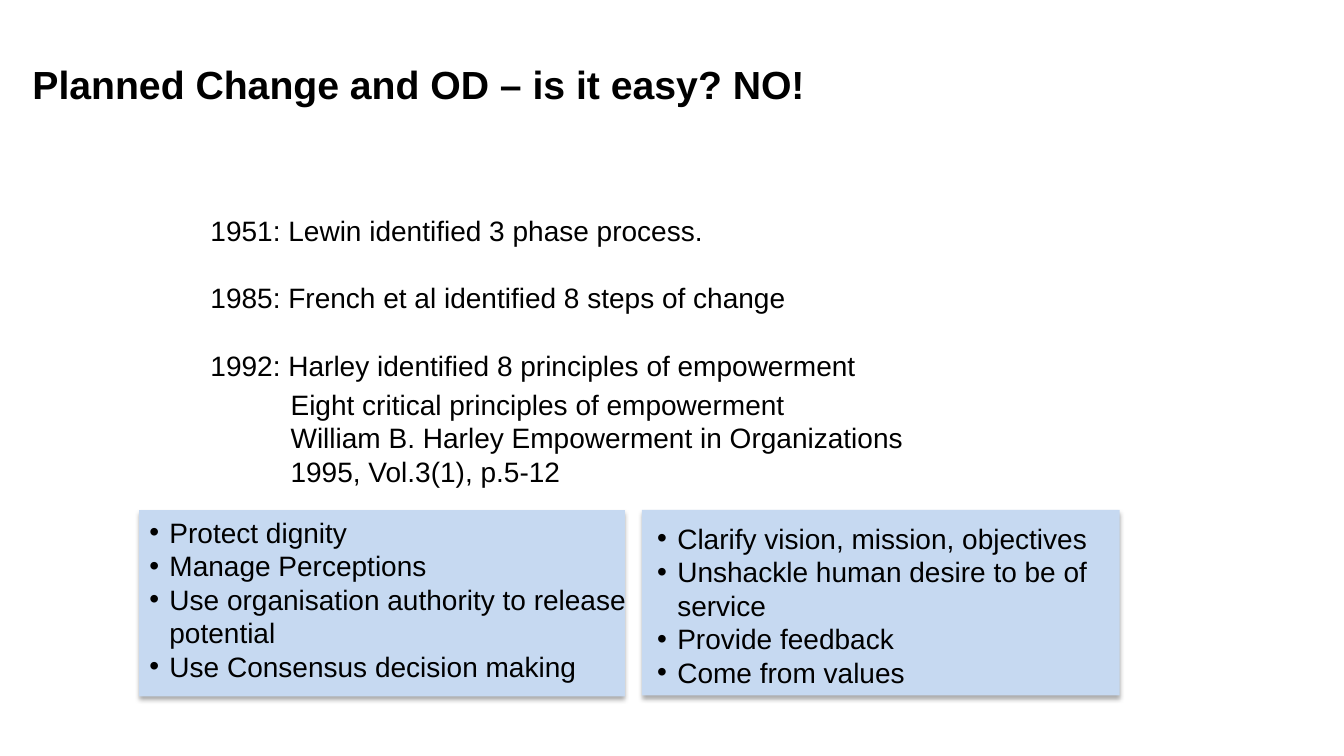
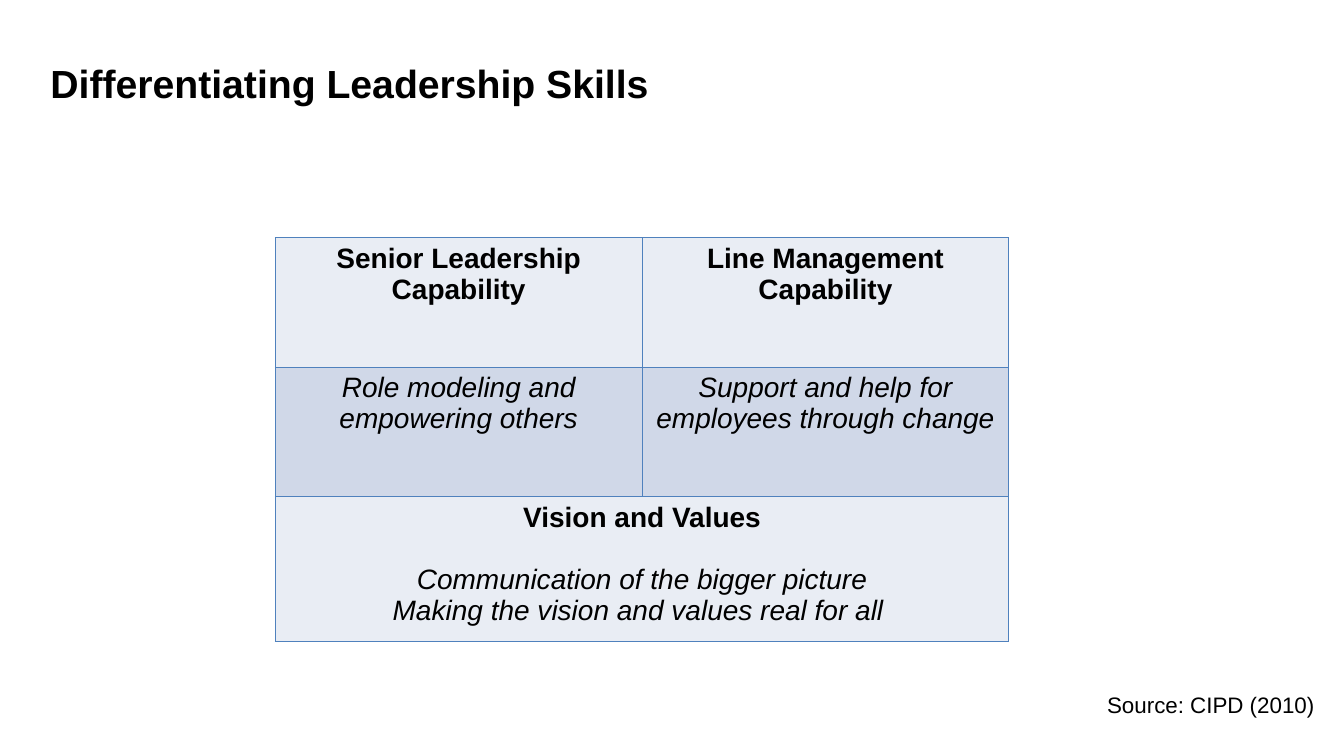
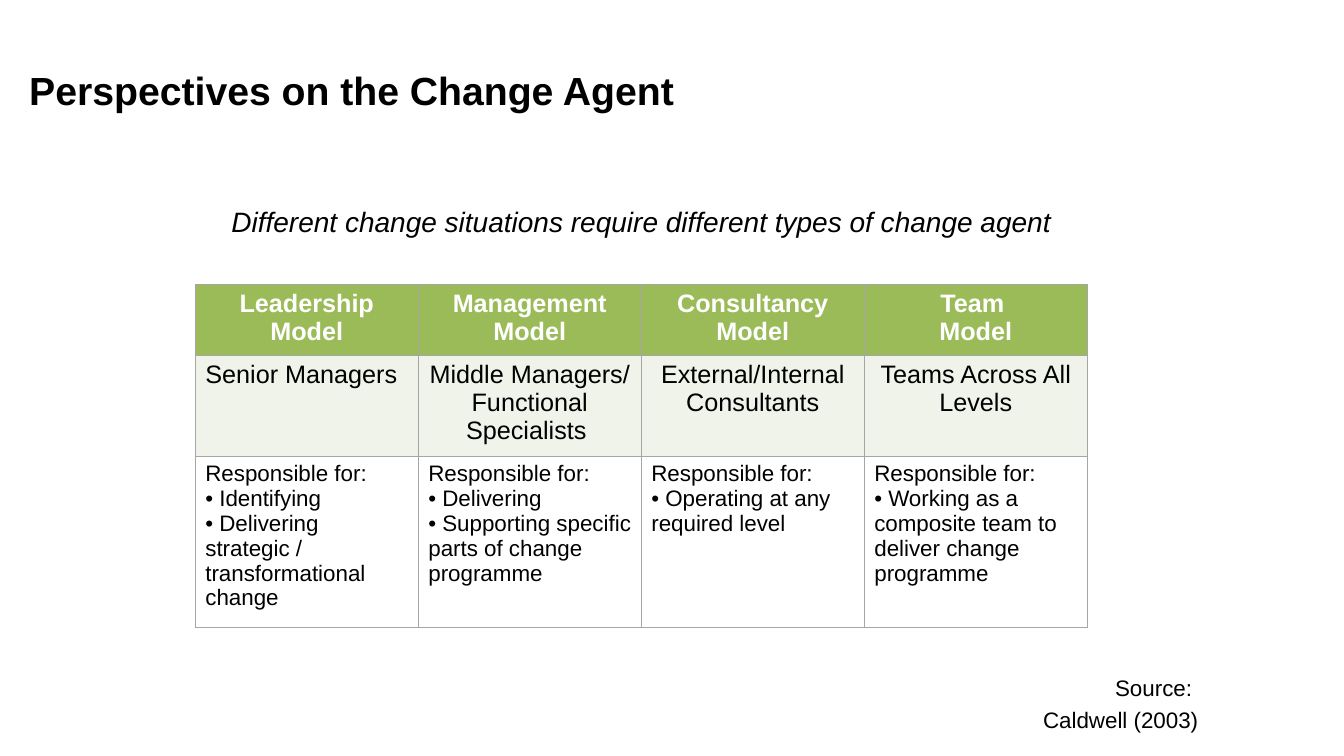
from lxml import etree
from pptx import Presentation
from pptx.dml.color import RGBColor
from pptx.enum.shapes import MSO_SHAPE
from pptx.enum.text import MSO_ANCHOR, MSO_AUTO_SIZE, PP_ALIGN
from pptx.oxml.ns import qn
from pptx.util import Pt

LEFT, CENTER, RIGHT = PP_ALIGN.LEFT, PP_ALIGN.CENTER, PP_ALIGN.RIGHT
TOP = MSO_ANCHOR.TOP
NO_AUTOFIT = MSO_AUTO_SIZE.NONE
RECTANGLE = MSO_SHAPE.RECTANGLE

TITLE_AND_CONTENT, TWO_CONTENT, TITLE_ONLY = 1, 3, 5
FONT = "Arial"
BLACK, WHITE = "000000", "FFFFFF"
PANEL_BLUE = "C6D9F1"
BLUE_LINE, BLUE_LIGHT, BLUE_MID = "4F81BD", "E9EDF4", "D0D8E8"
GRAY_LINE, GREEN, GREEN_LIGHT = "A6A6A6", "9BBB59", "EFF3EA"


def color(hex_string):
    return RGBColor.from_string(hex_string)


def place(shape, box):
    shape.left, shape.top, shape.width, shape.height = (Pt(n) for n in box)


def set_bullet(para, symbol=None, margin=0, hang=0):
    """Give the paragraph a bullet, or none, with a left margin and a hanging indent."""
    props = para._p.get_or_add_pPr()
    props.set("marL", str(Pt(margin)))
    props.set("indent", str(-Pt(hang)))
    if symbol:
        etree.SubElement(props, qn("a:buFont")).set("typeface", FONT)
        etree.SubElement(props, qn("a:buChar")).set("char", symbol)
    else:
        etree.SubElement(props, qn("a:buNone"))


def style_runs(para, size, ink=BLACK, bold=False, italic=False):
    for span in para.runs:
        span.font.name = FONT
        span.font.size = Pt(size)
        span.font.bold = bold
        span.font.italic = italic
        span.font.color.rgb = color(ink)


def write(frame, lines, size, align=LEFT, **style):
    """Fill the frame with one paragraph per line, all in one style."""
    frame.word_wrap = True
    frame.text = "\n".join(lines)
    for para in frame.paragraphs:
        para.alignment = align
        para.line_spacing = 1.0
        para.space_before = Pt(0)
        style_runs(para, size, **style)
    return frame.paragraphs


def write_placeholder(holder, box, lines, size, **style):
    place(holder, box)
    holder.text_frame.auto_size = NO_AUTOFIT
    holder.text_frame.vertical_anchor = TOP
    return write(holder.text_frame, lines, size, **style)


def add_page(deck, layout, title, left, top):
    page = deck.slides.add_slide(deck.slide_layouts[layout])
    write_placeholder(page.shapes.title, (left, top, 644, 76), [title], 28, bold=True)
    return page


def add_text(page, box, lines, size, **style):
    shape = page.shapes.add_textbox(*(Pt(n) for n in box))
    return write(shape.text_frame, lines, size, **style)


def add_panel_list(page, body, panel_box, text_box, lines):
    """Put a shadowed panel behind a bulleted list."""
    panel = page.shapes.add_shape(RECTANGLE, *(Pt(n) for n in panel_box))
    panel.fill.solid()
    panel.fill.fore_color.rgb = color(PANEL_BLUE)
    panel.line.fill.background()
    panel.shadow.inherit = False
    effects = panel._element.spPr.find(qn("a:effectLst"))
    shadow = etree.SubElement(effects, qn("a:outerShdw"), blurRad=str(Pt(3.5)),
                              dist=str(Pt(2.2)), dir="5400000", rotWithShape="0")
    ink = etree.SubElement(shadow, qn("a:srgbClr"), val=BLACK)
    etree.SubElement(ink, qn("a:alpha"), val="32000")
    body._element.addprevious(panel._element)
    for para in write_placeholder(body, text_box, lines, 20):
        set_bullet(para, "•", margin=14.4, hang=14.4)


def add_source(page, right, top, lines):
    paras = add_text(page, (right - 220, top, 220, 4 + 24 * len(lines)), lines, 16, align=RIGHT)
    for para in paras[1:]:
        para.space_before = Pt(3.8)


def add_grid(page, left, top, column_width, row_heights, columns, line, fills):
    """Add a table with equal columns, one fill per row and thin borders."""
    table = page.shapes.add_table(len(row_heights), columns, Pt(left), Pt(top),
                                  Pt(column_width * columns), Pt(sum(row_heights))).table
    table.first_row = table.horz_banding = False
    for column in table.columns:
        column.width = Pt(column_width)
    for row, height, fill in zip(table.rows, row_heights, fills):
        row.height = Pt(height)
        for cell in row.cells:
            props = cell._tc.get_or_add_tcPr()
            for side in ("a:lnL", "a:lnR", "a:lnT", "a:lnB"):
                border = etree.SubElement(props, qn(side), w=str(Pt(1)))
                solid = etree.SubElement(border, qn("a:solidFill"))
                etree.SubElement(solid, qn("a:srgbClr"), val=line)
            cell.fill.solid()
            cell.fill.fore_color.rgb = color(fill)
    return table


def planned_change(deck):
    page = add_page(deck, TWO_CONTENT, "Planned Change and OD – is it easy? NO!", 16, 39.6)
    history = add_text(page, (143.3, 149, 590, 206), [
        "1951: Lewin identified 3 phase process.",
        "1985: French et al identified 8 steps of change",
        "1992: Harley identified 8 principles of empowerment",
        "Eight critical principles of empowerment",
        "William B. Harley Empowerment in Organizations",
        "1995, Vol.3(1), p.5-12",
    ], 20)
    for para in history[1:3]:
        para.space_before = Pt(24)
    history[3].space_before = Pt(4)
    for para in history[3:]:
        set_bullet(para, margin=57.2)
    add_panel_list(page, page.placeholders[1], (99.4, 364.3, 347, 133.2),
                   (99.4, 364.3, 394.6, 133.2), [
        "Protect dignity",
        "Manage Perceptions",
        "Use organisation authority to release potential",
        "Use Consensus decision making",
    ])
    add_panel_list(page, page.placeholders[2], (458.6, 364.3, 341.3, 132.5),
                   (462.2, 368.6, 360, 128), [
        "Clarify vision, mission, objectives",
        "Unshackle human desire to be of service",
        "Provide feedback",
        "Come from values",
    ])


def leadership_skills(deck):
    page = add_page(deck, TITLE_ONLY, "Differentiating Leadership Skills", 28.8, 38.9)
    add_source(page, 946, 490, ["Source: CIPD (2010)"])
    table = add_grid(page, 196.7, 169.8, 262, (92.5, 92.5, 103.5), 2, BLUE_LINE,
                     (BLUE_LIGHT, BLUE_MID, BLUE_LIGHT))
    skills = [
        ("Senior Leadership Capability", "Role modeling and empowering others"),
        ("Line Management Capability", "Support and help for employees through change"),
    ]
    for column, (capability, skill) in enumerate(skills):
        write(table.cell(0, column).text_frame, [capability], 20, CENTER, bold=True)
        write(table.cell(1, column).text_frame, [skill], 20, CENTER, italic=True)
    table.cell(2, 0).merge(table.cell(2, 1))
    vision = write(table.cell(2, 0).text_frame, [
        "Vision and Values",
        "Communication of the bigger picture",
        "Making the vision and values real for all ",
    ], 20, CENTER, italic=True)
    style_runs(vision[0], 20, bold=True)
    vision[1].space_before = Pt(22)


def change_agent(deck):
    page = add_page(deck, TITLE_AND_CONTENT, "Perspectives on the Change Agent", 13.7, 43.9)
    intro = write_placeholder(
        page.placeholders[1], (53.3, 142.6, 810, 40),
        ["Different change situations require different types of change agent"],
        20, align=CENTER, italic=True)
    set_bullet(intro[0])
    add_source(page, 863, 478, ["Source: ", "Caldwell (2003)"])
    table = add_grid(page, 139.5, 203.2, 159.3, (50.7, 72.1, 122.1), 4, GRAY_LINE,
                     (GREEN, GREEN_LIGHT, WHITE))
    models = [
        (["Leadership Model"], "Senior Managers", LEFT,
         [" Identifying", " Delivering strategic / transformational change"]),
        (["Management Model"], "Middle Managers/ Functional Specialists ", CENTER,
         [" Delivering", " Supporting specific parts of change programme"]),
        (["Consultancy Model"], "External/Internal Consultants", CENTER,
         [" Operating at any required level"]),
        (["Team ", "Model"], "Teams Across All Levels", CENTER,
         [" Working as a composite team to deliver change programme"]),
    ]
    for column, (model, agents, align, duties) in enumerate(models):
        write(table.cell(0, column).text_frame, model, 18, CENTER, ink=WHITE, bold=True)
        write(table.cell(1, column).text_frame, [agents], 18, align)
        paras = write(table.cell(2, column).text_frame, ["Responsible for:"] + duties, 16)
        for para in paras[1:]:
            set_bullet(para, "•")


def main():
    deck = Presentation()
    deck.slide_width, deck.slide_height = Pt(960), Pt(540)
    planned_change(deck)
    leadership_skills(deck)
    change_agent(deck)
    deck.save("out.pptx")


if __name__ == "__main__":
    main()
